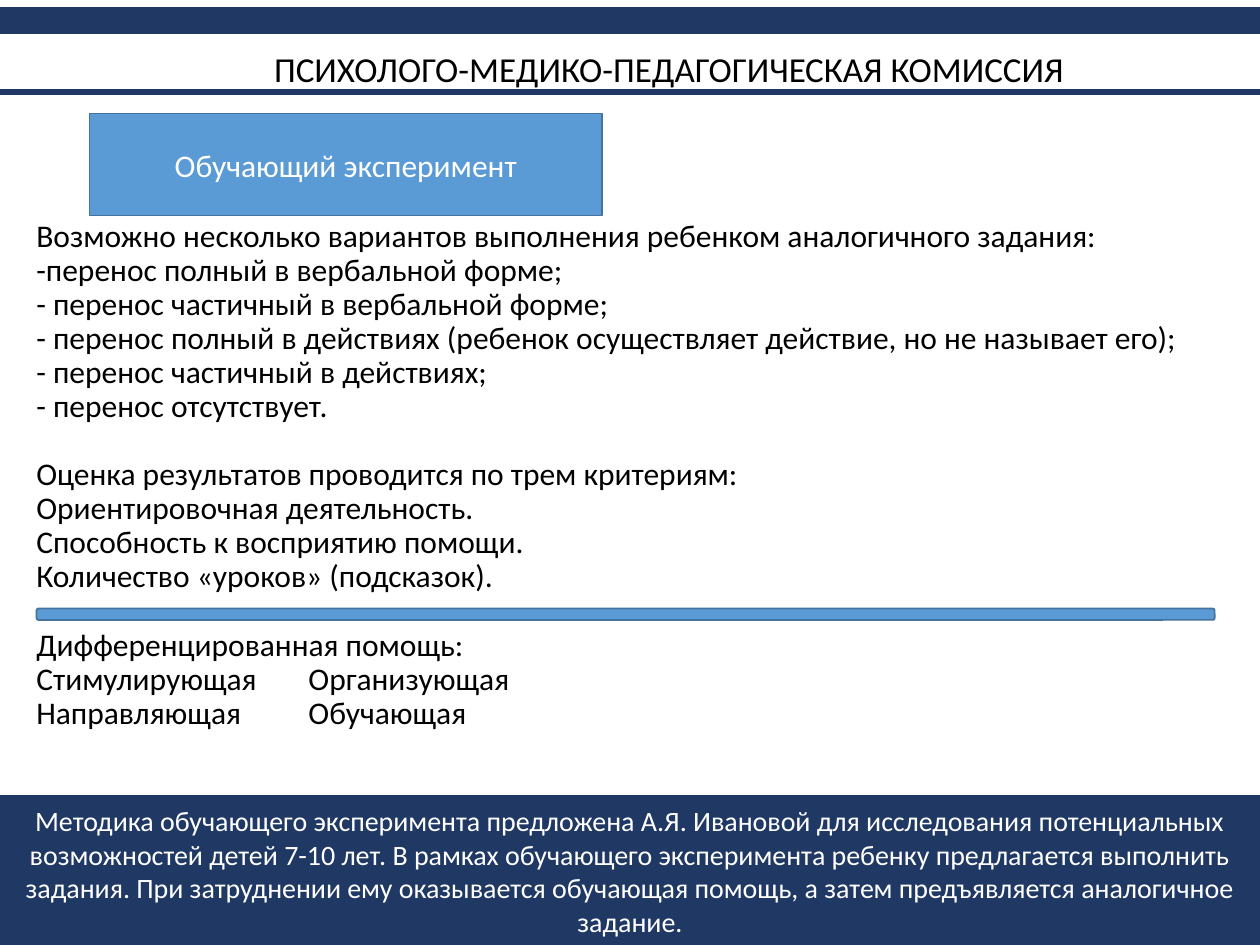
from dataclasses import dataclass
from typing import Optional

from lxml.etree import SubElement
from pptx import Presentation
from pptx.dml.color import RGBColor
from pptx.enum.shapes import MSO_SHAPE
from pptx.enum.text import MSO_ANCHOR, MSO_AUTO_SIZE, PP_ALIGN
from pptx.oxml.ns import qn
from pptx.util import Inches, Pt

FONT = "Calibri"
NAVY = "203864"
BLUE = "5B9BD5"
BLUE_EDGE = "43739E"
WHITE = "FFFFFF"
BLACK = "000000"
BODY_SIZE = 18
LINE_SPACING = 0.9
SECTION_GAP = 19.5
HELP_COLUMN = 2.16


@dataclass
class Block:
    left: float
    top: float
    width: float
    height: float
    fill: str
    edge: str
    kind: MSO_SHAPE = MSO_SHAPE.RECTANGLE
    text: Optional[str] = None
    size: float = BODY_SIZE


BLOCKS = [
    Block(0, 0.06, 10, 0.2, NAVY, NAVY),
    Block(0, 0.71, 10, 0.04, NAVY, NAVY),
    Block(0, 6.32, 10, 1.18, NAVY, NAVY, size=16, text=(
        "Методика обучающего эксперимента предложена А.Я. Ивановой для исследования "
        "потенциальных возможностей детей 7-10 лет. В рамках обучающего эксперимента "
        "ребенку предлагается выполнить задания. При затруднении ему оказывается "
        "обучающая помощь, а затем предъявляется аналогичное задание.")),
    Block(0.71, 0.9, 4.07, 0.81, BLUE, BLUE_EDGE, text="Обучающий эксперимент"),
    Block(0.29, 4.83, 9.35, 0.09, BLUE, BLUE_EDGE, MSO_SHAPE.ROUNDED_RECTANGLE),
]

SECTIONS = [
    [
        "Возможно несколько вариантов выполнения ребенком аналогичного задания:",
        "-перенос полный в вербальной форме;",
        "- перенос частичный в вербальной форме;",
        "- перенос полный в действиях (ребенок осуществляет действие, но не называет его);",
        "- перенос частичный в действиях;",
        "- перенос отсутствует.",
    ],
    [
        "Оценка результатов проводится по трем критериям:",
        "Ориентировочная деятельность.",
        "Способность к восприятию помощи.",
        "Количество «уроков» (подсказок).",
    ],
    [
        "Дифференцированная помощь:",
        "Стимулирующая\tОрганизующая",
        "Направляющая\tОбучающая",
    ],
]


def color(value: str) -> RGBColor:
    return RGBColor.from_string(value)


def add_span(para, text: str, size: float, tint: str) -> None:
    span = para.add_run()
    span.text = text
    span.font.name = FONT
    span.font.size = Pt(size)
    span.font.color.rgb = color(tint)


def add_block(page, block: Block) -> None:
    box = page.shapes.add_shape(block.kind, Inches(block.left), Inches(block.top),
                                Inches(block.width), Inches(block.height))
    box.shadow.inherit = False
    box.fill.solid()
    box.fill.fore_color.rgb = color(block.fill)
    box.line.color.rgb = color(block.edge)
    box.line.width = Pt(1)
    if block.text:
        frame = box.text_frame
        frame.word_wrap = True
        frame.vertical_anchor = MSO_ANCHOR.MIDDLE
        para = frame.paragraphs[0]
        para.alignment = PP_ALIGN.CENTER
        add_span(para, block.text, block.size, WHITE)


def set_title(page, text: str) -> None:
    title = page.shapes.title
    title.left, title.top = Inches(1.31), Inches(0.29)
    title.width, title.height = Inches(8), Inches(0.55)
    frame = title.text_frame
    frame.auto_size = MSO_AUTO_SIZE.NONE
    frame.vertical_anchor = MSO_ANCHOR.MIDDLE
    para = frame.paragraphs[0]
    para.alignment = PP_ALIGN.CENTER
    para.line_spacing = LINE_SPACING
    add_span(para, text, 20, BLACK)


def add_tab_stop(para, position: float) -> None:
    stops = SubElement(para._p.get_or_add_pPr(), qn("a:tabLst"))
    SubElement(stops, qn("a:tab"), pos=str(Inches(position)), algn="l")


def add_body(page, sections: list[list[str]]) -> None:
    box = page.shapes.add_textbox(Inches(0.19), Inches(1.7), Inches(9.43), Inches(4.4))
    frame = box.text_frame
    frame.word_wrap = True
    para = frame.paragraphs[0]
    for section_index, lines in enumerate(sections):
        for line_index, line in enumerate(lines):
            if section_index or line_index:
                para = frame.add_paragraph()
            para.alignment = PP_ALIGN.JUSTIFY
            para.line_spacing = LINE_SPACING
            starts_section = section_index > 0 and line_index == 0
            para.space_before = Pt(SECTION_GAP if starts_section else 0)
            if "\t" in line:
                add_tab_stop(para, HELP_COLUMN)
            add_span(para, line, BODY_SIZE, BLACK)


def main() -> None:
    deck = Presentation()
    deck.slide_width, deck.slide_height = Inches(10), Inches(7.5)
    page = deck.slides.add_slide(deck.slide_layouts[5])
    set_title(page, "ПСИХОЛОГО-МЕДИКО-ПЕДАГОГИЧЕСКАЯ КОМИССИЯ")
    add_body(page, SECTIONS)
    for block in BLOCKS:
        add_block(page, block)
    deck.save("out.pptx")


if __name__ == "__main__":
    main()
